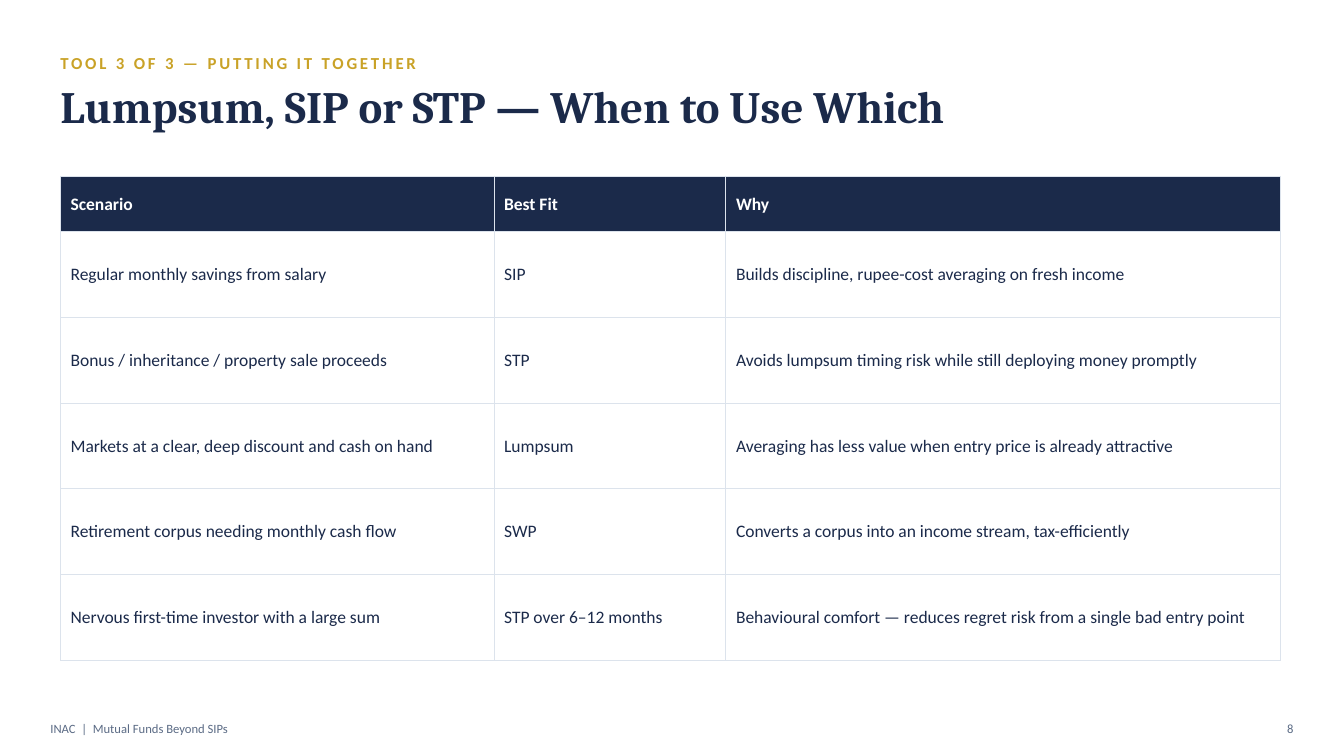
from dataclasses import dataclass

import pptx
import pptx.dml.color
import pptx.enum.text
import pptx.oxml
import pptx.oxml.ns
import pptx.slide
import pptx.table
import pptx.util

Pt = pptx.util.Pt
ALIGN = pptx.enum.text.PP_ALIGN
ANCHOR = pptx.enum.text.MSO_ANCHOR

NAVY, GOLD, SLATE, RULE, WHITE = "1B2A4A", "C9A227", "5B6B85", "DCE3EC", "FFFFFF"
BODY_FONT, TITLE_FONT = "Calibri", "Cambria"
MARGIN = 43.2
CONTENT_WIDTH = 871.2
FOOTER_TOP, FOOTER_HEIGHT = 509.76, 21.6


@dataclass
class Style:
    size: float
    color: str
    bold: bool = False
    font: str = BODY_FONT
    spacing: float = 0


@dataclass
class Label:
    text: str
    left: float
    top: float
    width: float
    height: float
    style: Style
    anchor: ANCHOR = ANCHOR.MIDDLE
    align: ALIGN = ALIGN.LEFT


FOOTER = Style(9, SLATE)
HEADER_CELL = Style(12.5, WHITE, bold=True)
BODY_CELL = Style(12.5, NAVY)

LABELS = [
    Label("TOOL 3 OF 3 — PUTTING IT TOGETHER", MARGIN, 32.4, 576, 25.2,
          Style(12, GOLD, bold=True, spacing=2)),
    Label("Lumpsum, SIP or STP — When to Use Which", MARGIN, 56.16,
          CONTENT_WIDTH, 64.8, Style(32, NAVY, bold=True, font=TITLE_FONT),
          anchor=ANCHOR.TOP),
    Label("INAC  |  Mutual Funds Beyond SIPs", 36, FOOTER_TOP, 504,
          FOOTER_HEIGHT, FOOTER),
    Label("8", 887.76, FOOTER_TOP, 36, FOOTER_HEIGHT, FOOTER, align=ALIGN.RIGHT),
]

TABLE_TOP = 126
COLUMN_WIDTHS = [309.6, 165.6, 396]
HEADER_HEIGHT, ROW_HEIGHT = 39.6, 61.2
ROWS = [
    ("Scenario", "Best Fit", "Why"),
    ("Regular monthly savings from salary", "SIP",
     "Builds discipline, rupee-cost averaging on fresh income"),
    ("Bonus / inheritance / property sale proceeds", "STP",
     "Avoids lumpsum timing risk while still deploying money promptly"),
    ("Markets at a clear, deep discount and cash on hand", "Lumpsum",
     "Averaging has less value when entry price is already attractive"),
    ("Retirement corpus needing monthly cash flow", "SWP",
     "Converts a corpus into an income stream, tax-efficiently"),
    ("Nervous first-time investor with a large sum", "STP over 6–12 months",
     "Behavioural comfort — reduces regret risk from a single bad entry point"),
]


def rgb(value: str) -> pptx.dml.color.RGBColor:
    return pptx.dml.color.RGBColor.from_string(value)


def add_run(p, text: str, style: Style) -> None:
    r = p.add_run()
    r.text = text
    r.font.name = style.font
    r.font.size = Pt(style.size)
    r.font.bold = style.bold
    r.font.color.rgb = rgb(style.color)
    if style.spacing:
        r._r.get_or_add_rPr().set("spc", str(round(style.spacing * 100)))


def add_label(s: pptx.slide.Slide, label: Label) -> None:
    sp = s.shapes.add_textbox(Pt(label.left), Pt(label.top),
                              Pt(label.width), Pt(label.height))
    tf = sp.text_frame
    tf.word_wrap = True
    tf.margin_left = tf.margin_top = tf.margin_right = tf.margin_bottom = 0
    tf.vertical_anchor = label.anchor
    p = tf.paragraphs[0]
    p.alignment = label.align
    add_run(p, label.text, label.style)


def set_borders(cell: pptx.table._Cell, color: str, width: float) -> None:
    tc_pr = cell._tc.get_or_add_tcPr()
    for side in ("lnL", "lnR", "lnT", "lnB"):
        tc_pr.append(pptx.oxml.parse_xml(
            f'<a:{side} {pptx.oxml.ns.nsdecls("a")} w="{Pt(width)}">'
            f'<a:solidFill><a:srgbClr val="{color}"/></a:solidFill></a:{side}>'))


def add_scenario_table(s: pptx.slide.Slide) -> None:
    heights = [HEADER_HEIGHT] + [ROW_HEIGHT] * (len(ROWS) - 1)
    table = s.shapes.add_table(len(ROWS), len(COLUMN_WIDTHS), Pt(MARGIN),
                               Pt(TABLE_TOP), Pt(CONTENT_WIDTH),
                               Pt(sum(heights))).table
    table.horz_banding = False
    for column, width in zip(table.columns, COLUMN_WIDTHS):
        column.width = Pt(width)
    for i, (row, height, texts) in enumerate(zip(table.rows, heights, ROWS)):
        row.height = Pt(height)
        for cell, text in zip(row.cells, texts):
            cell.vertical_anchor = ANCHOR.MIDDLE
            set_borders(cell, RULE, 0.75)
            cell.fill.solid()
            cell.fill.fore_color.rgb = rgb(NAVY if i == 0 else WHITE)
            add_run(cell.text_frame.paragraphs[0], text,
                    HEADER_CELL if i == 0 else BODY_CELL)


def main() -> None:
    prs = pptx.Presentation()
    prs.slide_width, prs.slide_height = Pt(959.76), Pt(540)
    s = prs.slides.add_slide(prs.slide_layouts[6])
    s.background.fill.solid()
    s.background.fill.fore_color.rgb = rgb(WHITE)
    for label in LABELS:
        add_label(s, label)
    add_scenario_table(s)
    prs.save("out.pptx")


if __name__ == "__main__":
    main()
